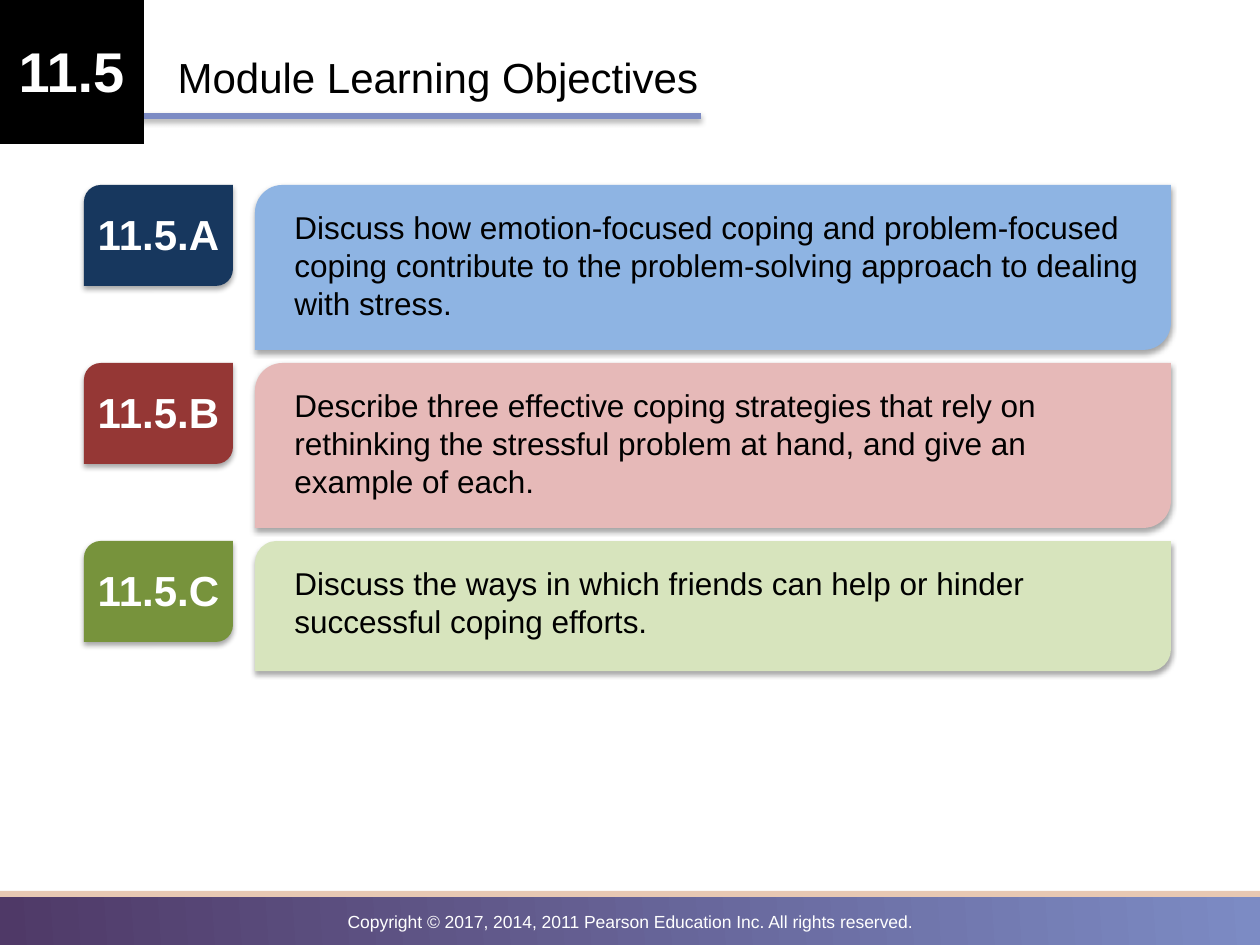
from lxml import etree
from pptx import Presentation
from pptx import util as u
from pptx.dml.color import RGBColor
from pptx.enum import shapes, text
from pptx.oxml.ns import qn

PX = u.Inches(1) / 126
FONT = "Arial"

BLACK = RGBColor(0x00, 0x00, 0x00)
WHITE = RGBColor(0xFF, 0xFF, 0xFF)
PURPLE = RGBColor(0x4F, 0x39, 0x67)
PERIWINKLE = RGBColor(0x7C, 0x8B, 0xC4)
PEACH = RGBColor(0xE7, 0xC8, 0xB3)
NAVY = RGBColor(0x17, 0x37, 0x5E)
SKY = RGBColor(0x8E, 0xB4, 0xE3)
MAROON = RGBColor(0x95, 0x37, 0x35)
ROSE = RGBColor(0xE6, 0xB9, 0xB8)
OLIVE = RGBColor(0x77, 0x93, 0x3C)
LIME = RGBColor(0xD7, 0xE4, 0xBD)

RECT = shapes.MSO_SHAPE.RECTANGLE
CARD = shapes.MSO_SHAPE.ROUND_2_DIAG_RECTANGLE
LEFT, CENTER = text.PP_ALIGN.LEFT, text.PP_ALIGN.CENTER

OBJECTIVES = [
    ("11.5.A", NAVY, SKY, 165, 127,
     "Discuss how emotion-focused coping and problem-focused coping contribute "
     "to the problem-solving approach to dealing with stress."),
    ("11.5.B", MAROON, ROSE, 165, 127,
     "Describe three effective coping strategies that rely on rethinking the "
     "stressful problem at hand, and give an example of each."),
    ("11.5.C", OLIVE, LIME, 130, 89,
     "Discuss the ways in which friends can help or hinder successful coping efforts."),
]
FIRST_TOP, ROW_STEP = 185, 178


def emu(*lengths):
    return [u.Emu(round(n * PX)) for n in lengths]


class Deck:
    def __init__(self):
        self.prs = Presentation()
        self.prs.slide_width, self.prs.slide_height = emu(1260, 945)
        self.s = self.prs.slides.add_slide(self.prs.slide_layouts[5])

    def shape(self, kind, box, color, shadow=False):
        sp = self.s.shapes.add_shape(kind, *emu(*box))
        sp.fill.solid()
        sp.fill.fore_color.rgb = color
        sp.line.fill.background()
        sp.shadow.inherit = False
        if shadow:
            self.soften(sp)
        return sp

    def soften(self, sp):
        """Give the shape a soft shadow falling straight down."""
        effects = sp._element.spPr.find(qn("a:effectLst"))
        outer = etree.SubElement(effects, qn("a:outerShdw"), blurRad=str(u.Pt(3.1)),
                                 dist=str(u.Pt(1.8)), dir="5400000", rotWithShape="0")
        color = etree.SubElement(outer, qn("a:srgbClr"), val=str(BLACK))
        etree.SubElement(color, qn("a:alpha"), val="35000")

    def gradient(self, box, start, end, angle):
        sp = self.shape(RECT, box, start)
        sp.fill.gradient()
        sp.fill.gradient_angle = angle
        for stop, position, color in zip(sp.fill.gradient_stops, (0, 1), (start, end)):
            stop.position = position
            stop.color.rgb = color

    def set_text(self, sp, words, size, color, align=LEFT, bold=False):
        tf = sp.text_frame
        tf.word_wrap = True
        tf.auto_size = text.MSO_AUTO_SIZE.NONE
        tf.vertical_anchor = text.MSO_ANCHOR.TOP
        tf.text = words
        p = tf.paragraphs[0]
        p.alignment = align
        font = p.runs[0].font
        font.name, font.size, font.bold = FONT, u.Pt(size), bold
        font.color.rgb = color

    def label(self, box, words, size, color, align=LEFT, bold=False):
        sp = self.s.shapes.add_textbox(*emu(*box))
        self.set_text(sp, words, size, color, align, bold)

    def title(self, box, words, size, color):
        sp = self.s.shapes.title
        sp.left, sp.top, sp.width, sp.height = emu(*box)
        self.set_text(sp, words, size, color)

    def objective(self, top, code, dark, light, height, text_height, words):
        self.shape(CARD, (84, top, 149, 101), dark, shadow=True)
        self.label((84, top + 17, 149, 63), code, 24, WHITE, CENTER, bold=True)
        self.shape(CARD, (255, top, 916, height), light, shadow=True)
        self.label((282, top + 17, 881, text_height), words, 18, BLACK)


def main():
    deck = Deck()
    deck.gradient((0, 892, 1260, 57), PURPLE, PERIWINKLE, 4)
    deck.shape(RECT, (0, 891, 1266, 6), PEACH)
    deck.label((0, 905, 1260, 34),
               "Copyright © 2017, 2014, 2011 Pearson Education Inc. All rights reserved.",
               10, WHITE, CENTER)

    deck.shape(RECT, (-25, 113, 726, 6), PERIWINKLE, shadow=True)
    deck.shape(RECT, (-1, -1, 145, 145), BLACK)
    deck.label((-1, 30, 145, 81), "11.5", 32, WHITE, CENTER, bold=True)
    deck.title((165, 45, 971, 63), "Module Learning Objectives", 24, BLACK)

    for row, objective in enumerate(OBJECTIVES):
        deck.objective(FIRST_TOP + row * ROW_STEP, *objective)

    deck.prs.save("out.pptx")


if __name__ == "__main__":
    main()
